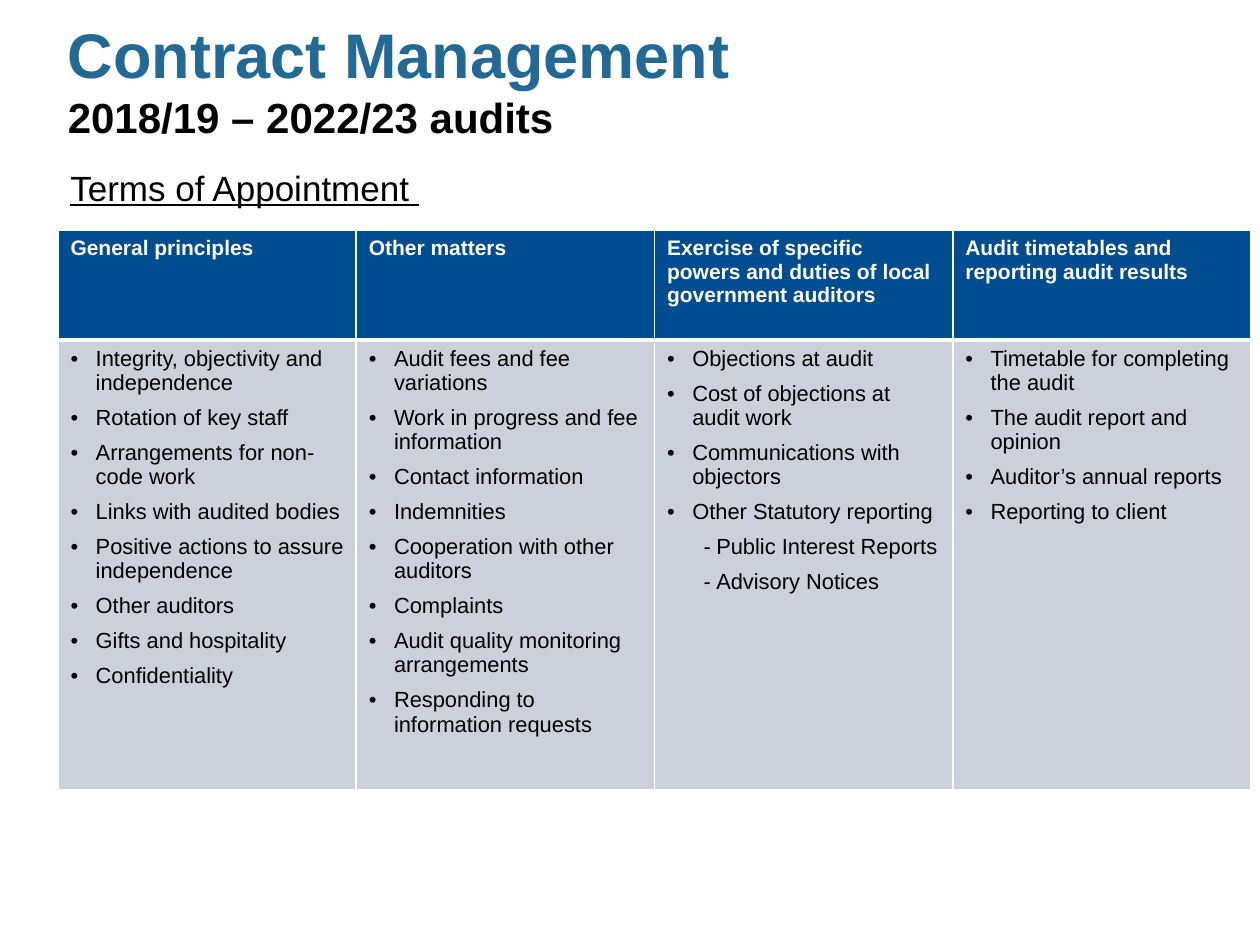
from lxml import etree
from pptx import Presentation, util as u
from pptx.dml import color
from pptx.enum import text
from pptx.oxml import ns

COLUMNS, ROWS = 10, 7.5
CELL = u.Inches(1)
HEADING = {"size": u.Pt(36), "bold": True, "color": "236995"}
SUBHEADING = {"size": u.Pt(24), "bold": True, "color": "000000"}
SECTION = {"size": u.Pt(20), "underline": True, "color": "000000"}
TABLE_HEAD = {"size": u.Pt(12), "bold": True, "color": "FFFFFF"}
TABLE_BODY = {"size": u.Pt(12.5), "bold": False, "color": "000000"}
BULLETS = {False: ("•", 0.2, -0.2), True: ("-", 0.39, -0.1)}

TERMS = {
    "General principles": [
        "Integrity, objectivity and independence",
        "Rotation of key staff",
        "Arrangements for non-code work",
        "Links with audited bodies",
        "Positive actions to assure independence",
        "Other auditors",
        "Gifts and hospitality",
        "Confidentiality",
    ],
    "Other matters": [
        "Audit fees and fee variations",
        "Work in progress and fee information",
        "Contact information",
        "Indemnities",
        "Cooperation with other auditors",
        "Complaints",
        "Audit quality monitoring arrangements",
        "Responding to information requests",
    ],
    "Exercise of specific powers and duties of local government auditors": [
        "Objections at audit",
        "Cost of objections at audit work",
        "Communications with objectors",
        "Other Statutory reporting",
        ["Public Interest Reports", "Advisory Notices"],
    ],
    "Audit timetables and reporting audit results": [
        "Timetable for completing the audit",
        "The audit report and opinion",
        "Auditor’s annual reports",
        "Reporting to client",
    ],
}


def rgb(value):
    """Turn a hex string into a colour."""
    return color.RGBColor.from_string(value)


def grid(*lengths):
    """Turn grid columns or rows into slide lengths."""
    return [int(length * CELL) for length in lengths]


def add_run(paragraph, words, style):
    """Append a styled run to a paragraph."""
    run = paragraph.add_run()
    run.text = words
    for name, value in {"name": "Arial", **style}.items():
        if name == "color":
            run.font.color.rgb = rgb(value)
        else:
            setattr(run.font, name, value)


def add_text_box(slide, box, anchor, lines):
    """Place a box of styled lines in one paragraph."""
    frame = slide.shapes.add_textbox(*grid(*box)).text_frame
    frame.word_wrap = True
    frame.vertical_anchor = anchor
    paragraph = frame.paragraphs[0]
    for index, (words, style) in enumerate(lines):
        if index:
            paragraph.add_line_break()
        add_run(paragraph, words, style)


def set_bullet(paragraph, nested):
    """Give a paragraph its bullet and hanging indent."""
    mark, margin, indent = BULLETS[nested]
    properties = paragraph._p.get_or_add_pPr()
    properties.set("marL", str(u.Inches(margin)))
    properties.set("indent", str(u.Inches(indent)))
    etree.SubElement(properties, ns.qn("a:buFont"), typeface="Arial")
    etree.SubElement(properties, ns.qn("a:buChar"), char=mark)
    paragraph.space_after = u.Pt(6)


def paint_cell(cell, fill, widths):
    """Fill a cell and draw its white borders."""
    cell.fill.solid()
    cell.fill.fore_color.rgb = rgb(fill)
    properties = cell._tc.get_or_add_tcPr()
    for index, (side, width) in enumerate(zip("LRTB", widths)):
        line = etree.Element(ns.qn(f"a:ln{side}"), w=str(u.Pt(width)))
        solid = etree.SubElement(line, ns.qn("a:solidFill"))
        etree.SubElement(solid, ns.qn("a:srgbClr"), val="FFFFFF")
        properties.insert(index, line)


def fill_list(cell, items):
    """Write bulleted items, with nested lists one level down."""
    entries = []
    for item in items:
        nested = isinstance(item, list)
        entries += [(words, nested) for words in (item if nested else [item])]
    frame = cell.text_frame
    for index, (words, nested) in enumerate(entries):
        paragraph = frame.add_paragraph() if index else frame.paragraphs[0]
        paragraph.level = int(nested)
        set_bullet(paragraph, nested)
        add_run(paragraph, words, TABLE_BODY)


def add_terms_table(slide, box, row_heights):
    """Place the table of terms, one column for each group."""
    shape = slide.shapes.add_table(len(row_heights), len(TERMS), *grid(*box))
    table = shape.table
    for row, height in zip(table.rows, grid(*row_heights)):
        row.height = height
    for index, (heading, items) in enumerate(TERMS.items()):
        head, body = table.cell(0, index), table.cell(1, index)
        paint_cell(head, "004C90", (1, 1, 1, 3))
        paint_cell(body, "CCD0DB", (1, 1, 3, 1))
        add_run(head.text_frame.paragraphs[0], heading, TABLE_HEAD)
        fill_list(body, items)


def main():
    """Build the slide and save it."""
    presentation = Presentation()
    presentation.slide_width, presentation.slide_height = grid(COLUMNS, ROWS)
    slide = presentation.slides.add_slide(presentation.slide_layouts[6])
    add_terms_table(slide, (0.46, 1.83, 9.47, 4.44), (0.87, 3.57))
    add_text_box(slide, (0.46, 1.27, 9.38, 0.74), text.MSO_ANCHOR.TOP,
                 [("Terms of Appointment ", SECTION)])
    add_text_box(slide, (0.44, 0, 9.43, 1.25), text.MSO_ANCHOR.MIDDLE,
                 [("Contract Management", HEADING),
                  ("2018/19 – 2022/23 audits", SUBHEADING)])
    presentation.save("out.pptx")


if __name__ == "__main__":
    main()
